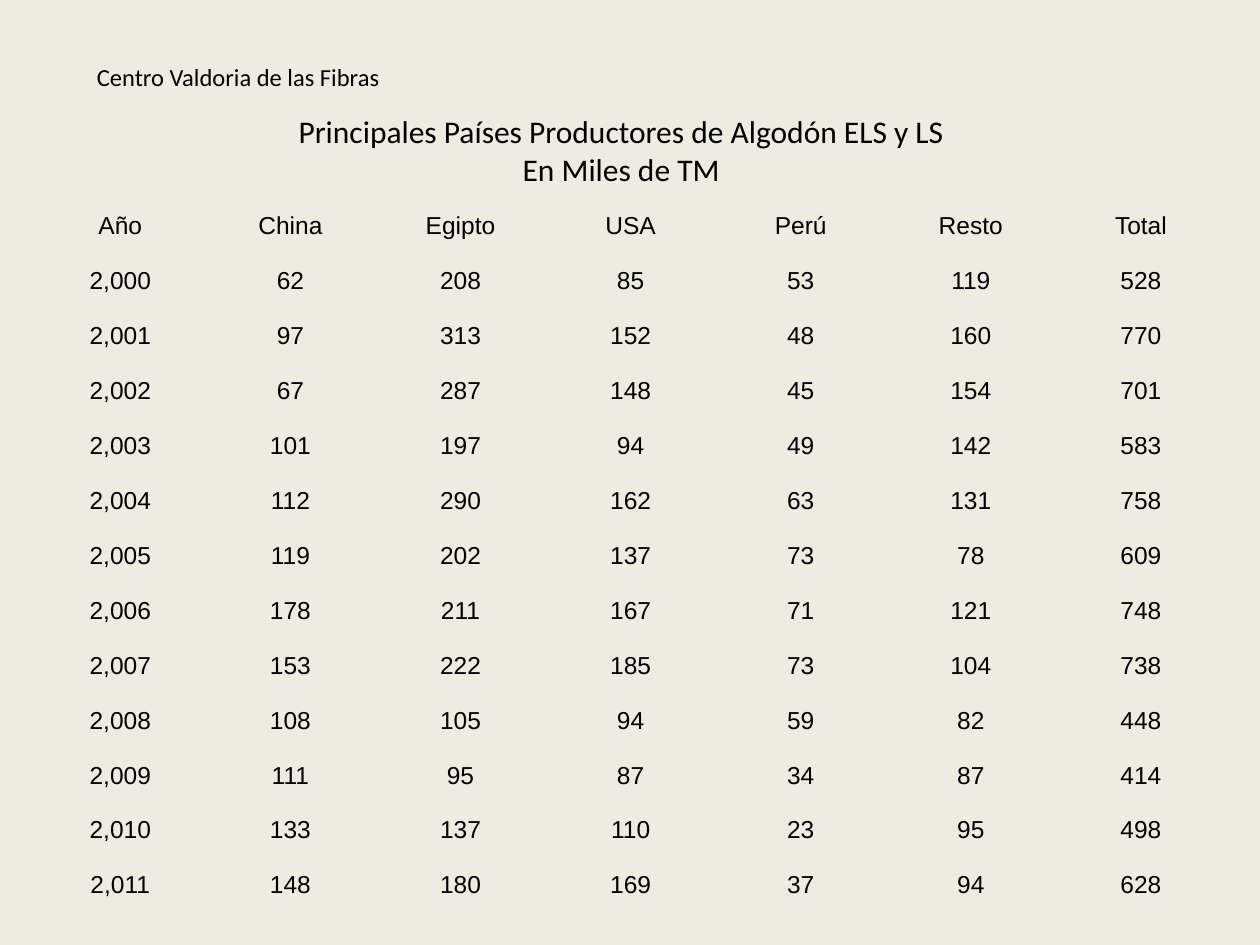
"""Build a slide with a table of the main cotton-producing countries."""
from dataclasses import dataclass
from typing import Any

from pptx import Presentation
from pptx.dml.color import RGBColor
from pptx.enum import text
from pptx.oxml import ns
from pptx.util import Inches, Pt

COLOURS = {"background": "EEECE1", "ink": "000000"}
NO_STYLE_NO_GRID = "{2D5ABB26-0587-4C30-8999-92F81FD0307C}"
COLUMN_WIDTH, ROW_HEIGHT = 1.35, 5.67 / 13
CELL_FORMAT = {
    "vertical_anchor": text.MSO_ANCHOR.BOTTOM,
    "margin_left": Inches(0.01),
    "margin_top": Inches(0.01),
    "margin_right": Inches(0.01),
    "margin_bottom": Inches(0),
}
BOX_FORMAT = {"word_wrap": False, "auto_size": text.MSO_AUTO_SIZE.SHAPE_TO_FIT_TEXT}

HEADINGS = ("Año", "China", "Egipto", "USA", "Perú", "Resto", "Total")
FIRST_YEAR = 2000
PRODUCTION = (
    (62, 208, 85, 53, 119, 528),
    (97, 313, 152, 48, 160, 770),
    (67, 287, 148, 45, 154, 701),
    (101, 197, 94, 49, 142, 583),
    (112, 290, 162, 63, 131, 758),
    (119, 202, 137, 73, 78, 609),
    (178, 211, 167, 71, 121, 748),
    (153, 222, 185, 73, 104, 738),
    (108, 105, 94, 59, 82, 448),
    (111, 95, 87, 34, 87, 414),
    (133, 137, 110, 23, 95, 498),
    (148, 180, 169, 37, 94, 628),
)


@dataclass(frozen=True)
class Caption:
    """A text box with its lines, place in inches and type size."""

    lines: tuple[str, ...]
    left: float
    top: float
    width: float
    height: float
    size: int
    align: Any


CAPTIONS = (
    Caption(("Principales Países Productores de Algodón ELS y LS", "En Miles de TM"),
            2.24, 0.84, 5.38, 0.71, 18, text.PP_ALIGN.CENTER),
    Caption(("Centro Valdoria de las Fibras",),
            0.67, 0.44, 2.59, 0.34, 14, text.PP_ALIGN.LEFT),
)


def apply_format(target: Any, values: dict[str, Any]) -> None:
    """Set each named attribute on the target."""
    for name, value in values.items():
        setattr(target, name, value)


def write_line(para: Any, line: str, font: str, size: int, align: Any) -> None:
    """Write one line of text in a paragraph."""
    para.alignment = align
    span = para.add_run()
    span.text = line
    apply_format(span.font, {"name": font, "size": Pt(size)})
    span.font.color.rgb = RGBColor.from_string(COLOURS["ink"])


def draw_table(page: Any) -> None:
    """Draw the production table, one row per year."""
    years = [(f"{FIRST_YEAR + offset:,}", *values) for offset, values in enumerate(PRODUCTION)]
    rows = [HEADINGS, *years]
    table = page.shapes.add_table(
        len(rows), len(HEADINGS), Inches(0.28), Inches(1.47),
        Inches(COLUMN_WIDTH * len(HEADINGS)), Inches(ROW_HEIGHT * len(rows))).table
    apply_format(table, {"first_row": False, "horz_banding": False})
    table._tbl.tblPr.find(ns.qn("a:tableStyleId")).text = NO_STYLE_NO_GRID
    for row, values in zip(table.rows, rows):
        for cell, value in zip(row.cells, values):
            apply_format(cell, CELL_FORMAT)
            cell.fill.background()
            write_line(cell.text_frame.paragraphs[0], str(value), "Arial", 14,
                       text.PP_ALIGN.CENTER)


def draw_caption(page: Any, caption: Caption) -> None:
    """Draw a caption, one paragraph per line."""
    box = page.shapes.add_textbox(Inches(caption.left), Inches(caption.top),
                                  Inches(caption.width), Inches(caption.height))
    frame = box.text_frame
    apply_format(frame, BOX_FORMAT)
    for index, line in enumerate(caption.lines):
        para = frame.add_paragraph() if index else frame.paragraphs[0]
        write_line(para, line, "Calibri", caption.size, caption.align)


def main() -> None:
    """Build and save the deck."""
    deck = Presentation()
    apply_format(deck, {"slide_width": Inches(10), "slide_height": Inches(7.5)})
    page = deck.slides.add_slide(deck.slide_layouts[6])
    fill = page.background.fill
    fill.solid()
    fill.fore_color.rgb = RGBColor.from_string(COLOURS["background"])
    draw_table(page)
    for caption in CAPTIONS:
        draw_caption(page, caption)
    deck.save("out.pptx")


if __name__ == "__main__":
    main()
